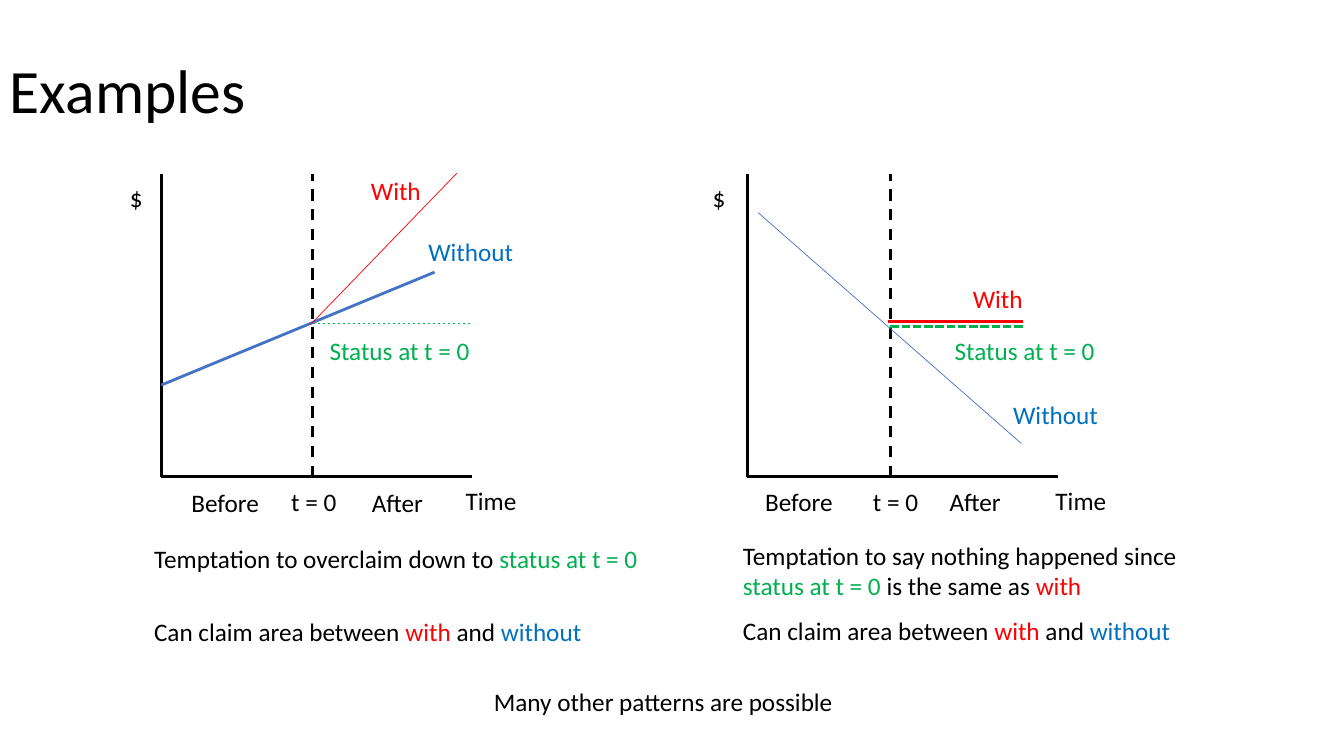
import pptx
import pptx.dml.color
import pptx.enum.dml
import pptx.enum.shapes
import pptx.enum.text
import pptx.oxml.ns
import pptx.util
from lxml import etree

Inches = pptx.util.Inches
DASH = pptx.enum.dml.MSO_LINE.DASH
SHORT_DASH = pptx.enum.dml.MSO_LINE.SQUARE_DOT
MIDDLE = pptx.enum.text.MSO_ANCHOR.MIDDLE
TOP = pptx.enum.text.MSO_ANCHOR.TOP

COLOURS = {
    "black": "000000",
    "with": "FF0000",
    "without": "0070C0",
    "status": "00B050",
    "trend": "4472C4",
}
AXIS_TOP, AXIS_BOTTOM, AXIS_LENGTH = 1.73, 4.73, 3.08
CLAIM = [("Can claim area between ", "black"), ("with", "with"),
         (" and ", "black"), ("without", "without")]


def rgb(name):
    return pptx.dml.color.RGBColor.from_string(COLOURS[name])


def add_text(slide, box, parts, size=18, wrap=False, anchor=TOP, margin_right=0.1):
    """Add a one-paragraph text box; parts are (text, colour name) pairs."""
    frame = slide.shapes.add_textbox(*map(Inches, box)).text_frame
    frame.word_wrap = wrap
    frame.vertical_anchor = anchor
    frame.margin_right = Inches(margin_right)
    paragraph = frame.paragraphs[0]
    for words, colour in parts:
        run = paragraph.add_run()
        run.text = words
        run.font.name = "Calibri"
        run.font.size = pptx.util.Pt(size)
        run.font.color.rgb = rgb(colour)
    return paragraph


def add_line(slide, start, end, colour="black", width=2, dash=None):
    line = slide.shapes.add_connector(
        pptx.enum.shapes.MSO_CONNECTOR.STRAIGHT, *map(Inches, start + end))
    line.line.color.rgb = rgb(colour)
    line.line.width = pptx.util.Pt(width)
    if dash:
        line.line.dash_style = dash
    etree.SubElement(line._element.spPr, pptx.oxml.ns.qn("a:effectLst"))


def add_axes(slide, left, start_time):
    """Draw both axes and the dashed line where the project starts."""
    add_line(slide, (left, AXIS_TOP), (left, AXIS_BOTTOM))
    add_line(slide, (left, AXIS_BOTTOM), (left + AXIS_LENGTH, AXIS_BOTTOM))
    add_line(slide, (start_time, AXIS_BOTTOM), (start_time, AXIS_TOP), dash=DASH)


def add_axis_labels(slide, places):
    """Add black labels; places maps each wording to its left and top."""
    widths = {"$": 0.34, "Before": 0.95, "t = 0": 0.75, "After": 0.73, "Time": 0.77}
    for words, (left, top) in places.items():
        add_text(slide, (left, top, widths[words], 0.4), [(words, "black")])


def add_curve_labels(slide, places):
    """Name the curves; places maps each colour name to left and top."""
    wordings = {"with": ("With", 0.65), "without": ("Without", 1.03),
                "status": ("Status at t = 0", 1.72)}
    for curve, (left, top) in places.items():
        words, width = wordings[curve]
        add_text(slide, (left, top, width, 0.35), [(words, curve)],
                 anchor=MIDDLE, margin_right=0)


def add_rising_example(slide):
    add_axes(slide, 1.6, 3.1)
    add_line(slide, (1.6, 3.82), (4.31, 2.7), "trend")
    add_line(slide, (4.53, 1.72), (3.08, 3.22), "with", 0.5)
    add_line(slide, (3.1, 3.21), (4.68, 3.21), "status", 0.5, DASH)
    add_curve_labels(slide, {"with": (3.58, 1.71), "without": (4.15, 2.32),
                             "status": (3.17, 3.3)})
    add_axis_labels(slide, {"$": (1.19, 1.76), "Before": (1.8, 4.79),
                            "t = 0": (2.79, 4.78), "After": (3.59, 4.79),
                            "Time": (4.52, 4.77)})
    add_text(slide, (1.43, 5.34, 5.42, 0.38),
             [("Temptation to overclaim down to ", "black"),
              ("status at t = 0", "status")], wrap=True)
    add_text(slide, (1.43, 6.07, 4.77, 0.4), CLAIM, wrap=True)


def add_falling_example(slide):
    add_axes(slide, 7.41, 8.83)
    add_line(slide, (7.52, 2.11), (10.13, 4.4), "trend", 0.5)
    add_line(slide, (8.81, 3.19), (10.15, 3.19), "with")
    add_line(slide, (8.83, 3.24), (10.16, 3.24), "status", dash=SHORT_DASH)
    add_curve_labels(slide, {"with": (9.55, 2.79), "without": (9.95, 3.94),
                             "status": (9.37, 3.3)})
    add_axis_labels(slide, {"$": (6.97, 1.76), "Before": (7.49, 4.78),
                            "t = 0": (8.56, 4.78), "After": (9.32, 4.78),
                            "Time": (10.37, 4.77)})
    add_text(slide, (7.27, 5.31, 4.66, 0.7),
             [("Temptation to say nothing happened since ", "black"),
              ("status at t = 0 ", "status"),
              ("is the same as ", "black"), ("with", "with")], wrap=True)
    add_text(slide, (7.27, 6.06, 4.75, 0.41), CLAIM)


def main():
    presentation = pptx.Presentation()
    presentation.slide_width = Inches(13.33)
    presentation.slide_height = Inches(7.5)
    slide = presentation.slides.add_slide(presentation.slide_layouts[6])
    title = add_text(slide, (0, 0, 12.42, 1.85), [("Examples", "black")],
                     size=44, wrap=True, anchor=MIDDLE)
    title.line_spacing = 0.9
    add_rising_example(slide)
    add_falling_example(slide)
    add_text(slide, (4.8, 6.76, 3.93, 0.4),
             [("Many other patterns are possible", "black")])
    presentation.save("out.pptx")


if __name__ == "__main__":
    main()
